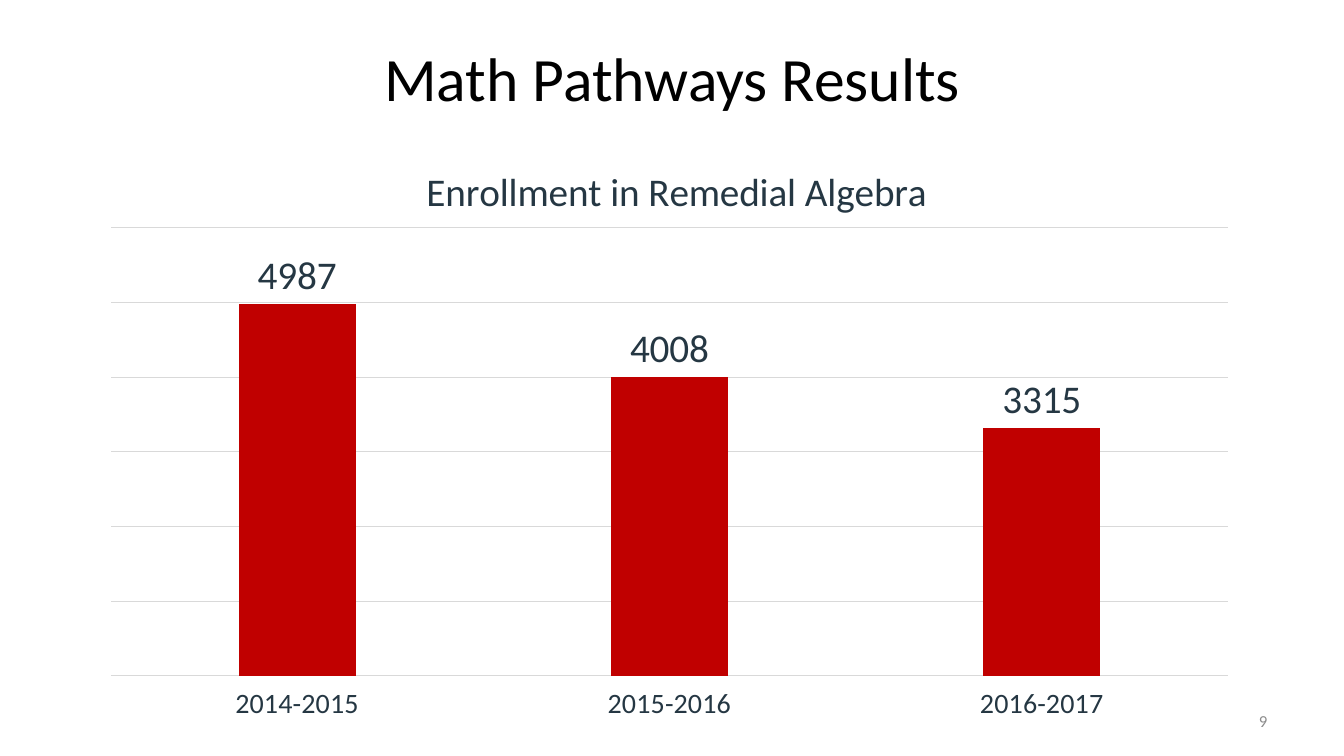
from dataclasses import dataclass

from lxml import etree
from pptx import Presentation
from pptx.chart.data import CategoryChartData
from pptx.dml.color import RGBColor
from pptx.enum.chart import XL_CHART_TYPE, XL_LABEL_POSITION, XL_TICK_LABEL_POSITION, XL_TICK_MARK
from pptx.enum.text import MSO_ANCHOR, MSO_AUTO_SIZE, PP_ALIGN
from pptx.oxml.ns import qn
from pptx.util import Inches, Pt


@dataclass(frozen=True)
class Theme:
    font: str = "Calibri"
    black: str = "000000"
    slate: str = "253743"
    grey: str = "8C8C8C"
    grid: str = "D9D9D9"
    bar: str = "C00000"
    heading_size: int = 44
    chart_size: int = 28
    axis_size: int = 20
    number_size: int = 12


THEME = Theme()
ENROLLMENT = {"2014-2015": 4987, "2015-2016": 4008, "2016-2017": 3315}


def style_font(font, size, color):
    font.name = THEME.font
    font.size = Pt(size)
    font.bold = False
    font.color.rgb = RGBColor.from_string(color)


def style_line(line, color):
    line.color.rgb = RGBColor.from_string(color)
    line.width = Pt(0.75)


def fill_frame(frame, text, size, color, align, anchor):
    frame.word_wrap = True
    frame.auto_size = MSO_AUTO_SIZE.NONE
    frame.vertical_anchor = anchor
    frame.text = text
    paragraph = frame.paragraphs[0]
    paragraph.alignment = align
    style_font(paragraph.runs[0].font, size, color)


def add_heading(slide, text):
    heading = slide.shapes.title
    heading.left, heading.top = Inches(0.67), Inches(0.3)
    heading.width, heading.height = Inches(12), Inches(1.7)
    heading.text_frame.margin_top = Inches(0.1)
    fill_frame(heading.text_frame, text, THEME.heading_size, THEME.black,
               PP_ALIGN.CENTER, MSO_ANCHOR.TOP)


def add_page_number(slide, number):
    page_number = slide.shapes.add_textbox(Inches(9.56), Inches(6.95), Inches(3.11), Inches(0.4))
    fill_frame(page_number.text_frame, number, THEME.number_size, THEME.grey,
               PP_ALIGN.RIGHT, MSO_ANCHOR.MIDDLE)


def set_layout(element, **settings):
    """Place a chart part by fractions of the chart area."""
    layout = element.find(qn("c:layout"))
    if layout is None:
        layout = etree.Element(qn("c:layout"))
        text = element.find(qn("c:tx"))
        element.insert(0 if text is None else 1, layout)
    for child in list(layout):
        layout.remove(child)
    manual = etree.SubElement(layout, qn("c:manualLayout"))
    for tag, value in settings.items():
        etree.SubElement(manual, qn(f"c:{tag}")).set("val", str(value))


def style_axes(chart):
    years = chart.category_axis
    years.major_tick_mark = years.minor_tick_mark = XL_TICK_MARK.NONE
    years.tick_label_position = XL_TICK_LABEL_POSITION.LOW
    style_font(years.tick_labels.font, THEME.axis_size, THEME.slate)
    style_line(years.format.line, THEME.grid)

    students = chart.value_axis
    students.minimum_scale, students.maximum_scale = 0, 6000
    students.major_unit = 1000
    students.has_major_gridlines = True
    style_line(students.major_gridlines.format.line, THEME.grid)
    students.visible = False


def add_enrollment_chart(slide, title):
    data = CategoryChartData()
    data.categories = list(ENROLLMENT)
    data.add_series("Series 1", list(ENROLLMENT.values()))
    chart = slide.shapes.add_chart(
        XL_CHART_TYPE.COLUMN_CLUSTERED,
        Inches(0.87), Inches(1.27), Inches(11.54), Inches(5.94), data).chart
    style_font(chart.font, 10, THEME.black)
    chart.has_legend = False

    chart.has_title = True
    chart.chart_title.text_frame.text = title
    style_font(chart.chart_title.text_frame.paragraphs[0].runs[0].font,
               THEME.chart_size, THEME.slate)
    chart.chart_title.include_in_layout = False
    set_layout(chart.chart_title._element, xMode="edge", yMode="edge", x=0.285, y=0.05)
    set_layout(chart._chartSpace.chart.plotArea, layoutTarget="inner",
               xMode="edge", yMode="edge", x=0.02, y=0.167, w=0.96, h=0.748)
    style_axes(chart)

    plot = chart.plots[0]
    plot.gap_width, plot.overlap = 219, -27
    plot.vary_by_categories = False
    enrollment = plot.series[0]
    enrollment.format.fill.solid()
    enrollment.format.fill.fore_color.rgb = RGBColor.from_string(THEME.bar)
    labels = enrollment.data_labels
    labels.show_value = True
    labels.position = XL_LABEL_POSITION.OUTSIDE_END
    style_font(labels.font, THEME.chart_size, THEME.slate)


def main():
    deck = Presentation()
    deck.slide_width, deck.slide_height = Inches(13.33), Inches(7.5)
    title_only = deck.slide_layouts[5]
    slide = deck.slides.add_slide(title_only)
    add_heading(slide, "Math Pathways Results")
    add_page_number(slide, "9")
    add_enrollment_chart(slide, "Enrollment in Remedial Algebra")
    deck.save("out.pptx")


if __name__ == "__main__":
    main()
